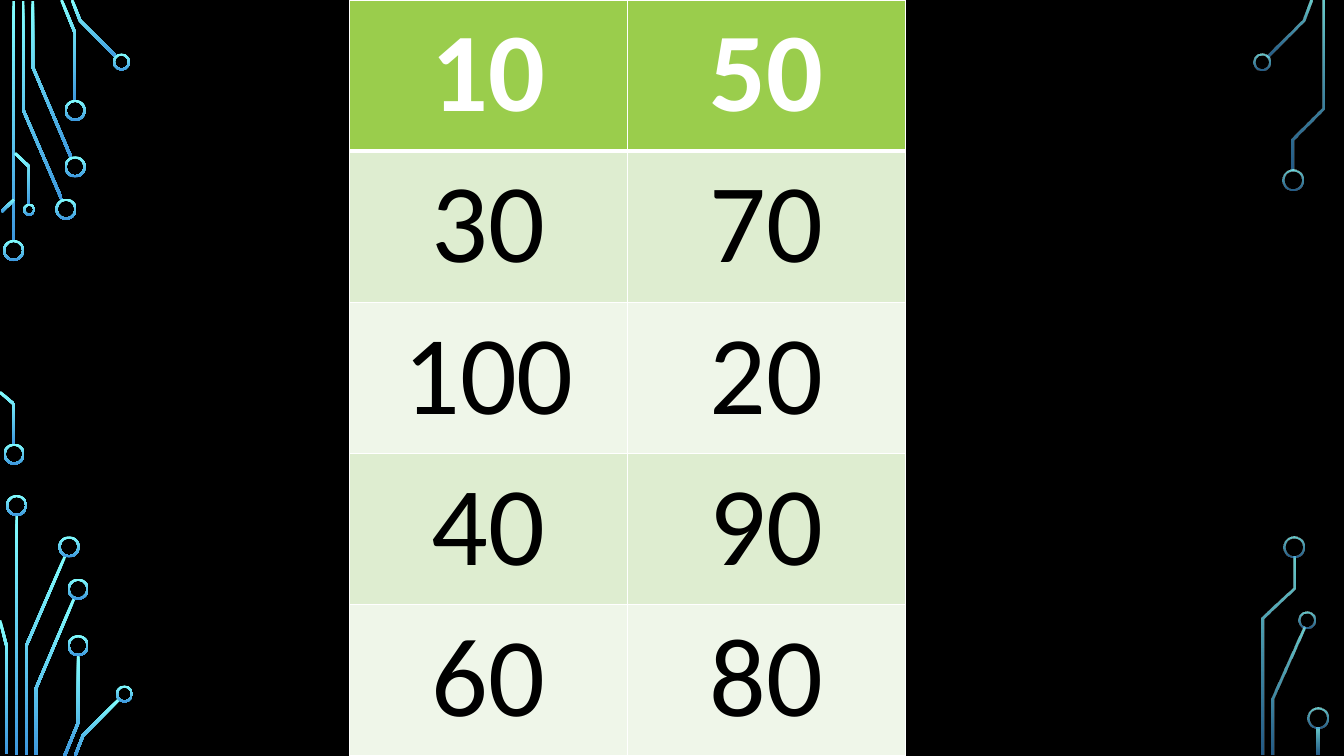
"""Build a slide with a two-column number table between circuit-board wires."""
from pptx import Presentation
from pptx import util as u
from pptx.dml.color import RGBColor
from pptx.enum import shapes, text
from pptx.oxml import ns, xmlchemy

BLACK = RGBColor(0x00, 0x00, 0x00)
WHITE = RGBColor(0xFF, 0xFF, 0xFF)
CYAN = RGBColor(0x82, 0xFF, 0xFF)
BLUE = RGBColor(0x3D, 0x97, 0xDE)
GREEN = RGBColor(0x9A, 0xCD, 0x4C)
BANDS = [RGBColor(0xEF, 0xF6, 0xE9), RGBColor(0xDE, 0xED, 0xD0)]

GRID = u.Inches(0.01)
SLIDE_COLUMNS, SLIDE_ROWS = 1333, 750
WIRE_WIDTH = 2.7
RING_WIDTH = 2
NO_RING, TINY, SMALL, LARGE = 0, 12, 17, 21
SOLID, FADED = (100, 100), (80, 60)

TRUNK = ([(13.5, 1), (13.5, 248.5)], LARGE)
LONG_WIRE = ([(23, 1), (23, 109), (65.5, 207.5)], LARGE)
MIDDLE_WIRE = ([(32.5, 1), (32.5, 66.5), (74.5, 165.5)], LARGE)
SHORT_WIRE = ([(61, 0), (74.5, 33), (74.5, 109.5)], LARGE)
CORNER_WIRE = ([(71.5, 0), (79.5, 20.5), (120.5, 61.5)], SMALL)
FAN = [TRUNK, LONG_WIRE, MIDDLE_WIRE, SHORT_WIRE, CORNER_WIRE]
FAN_SHIFT = 3
CORNER_MIRROR = 1372

bottom_fan = [
    ([(x + FAN_SHIFT, SLIDE_ROWS - y) for x, y in path], ring_size)
    for path, ring_size in FAN
]
corner_path, corner_ring = CORNER_WIRE
right_corner = ([(CORNER_MIRROR - x, y) for x, y in corner_path], corner_ring)

trunk_branch = ([(15, 152), (29, 165.5), (29, 208)], TINY)
trunk_twig = ([(1.5, 210), (14, 198)], NO_RING)
edge_hook = ([(0, 389), (14, 401), (14, 450.5)], LARGE)
edge_stub = ([(0, 615.5), (6.5, 641), (6.5, 748)], NO_RING)
right_top_step = ([(1312.5, 1), (1312.5, 107.5), (1282.5, 138), (1282.5, 178.5)], LARGE)
right_bottom_step = ([(1252.5, 749), (1252.5, 613.5), (1283.5, 583.5), (1283.5, 542.5)], LARGE)
right_slant = ([(1262.5, 749), (1262.5, 693.5), (1296.5, 615.5)], SMALL)
right_stem = ([(1307, 749), (1307, 712.5)], LARGE)

left_wires = FAN + bottom_fan + [trunk_branch, trunk_twig, edge_hook, edge_stub]
right_wires = [right_corner, right_top_step, right_bottom_step, right_slant, right_stem]
NUMBERS = [("10", "50"), ("30", "70"), ("100", "20"), ("40", "90"), ("60", "80")]


def wire_outline(path, ring_size):
    """Widen a centre line into a band that stops at the inside of its ring."""
    points = [complex(x, y) for x, y in path]
    directions = [(end - start) / abs(end - start) for start, end in zip(points, points[1:])]
    if ring_size:
        points[-1] -= directions[-1] * (ring_size / 2 - RING_WIDTH / 2)
    normals = [direction * 1j for direction in directions]
    near_side, far_side = [], []
    for point, before, after in zip(points, normals[:1] + normals, normals + normals[-1:]):
        miter = (before + after) / (1 + (before * after.conjugate()).real)
        near_side.append(point + miter * WIRE_WIDTH / 2)
        far_side.append(point - miter * WIRE_WIDTH / 2)
    return [(point.real * GRID, point.imag * GRID) for point in near_side + far_side[::-1]]


def add_border(cell, side, points):
    """Draw one white cell edge."""
    line = xmlchemy.OxmlElement(f"a:ln{side}")
    line.set("w", str(u.Pt(points)))
    fill = xmlchemy.OxmlElement("a:solidFill")
    color = xmlchemy.OxmlElement("a:srgbClr")
    color.set("val", str(WHITE))
    fill.append(color)
    line.append(fill)
    cell._tc.get_or_add_tcPr().append(line)


presentation = Presentation()
presentation.slide_width = GRID * SLIDE_COLUMNS
presentation.slide_height = GRID * SLIDE_ROWS
slide = presentation.slides.add_slide(presentation.slide_layouts[6])
slide.background.fill.solid()
slide.background.fill.fore_color.rgb = BLACK

for wires, opacities in [(left_wires, SOLID), (right_wires, FADED)]:
    for path, ring_size in wires:
        outline = wire_outline(path, ring_size)
        xs, ys = zip(*outline)
        straight = path[0][0] == path[-1][0] and len(path) == 2
        if straight:
            box = [round(n) for n in (min(xs), min(ys), max(xs) - min(xs), max(ys) - min(ys))]
            parts = [slide.shapes.add_shape(shapes.MSO_SHAPE.RECTANGLE, *box)]
        else:
            builder = slide.shapes.build_freeform(*outline[0], scale=1.0)
            builder.add_line_segments(outline[1:], close=True)
            parts = [builder.convert_to_shape()]
        if ring_size:
            center_x, center_y = path[-1]
            left, top = center_x - ring_size / 2, center_y - ring_size / 2
            box = [round(GRID * length) for length in (left, top, ring_size, ring_size)]
            ring = slide.shapes.add_shape(shapes.MSO_SHAPE.DONUT, *box)
            ring.adjustments[0] = RING_WIDTH / ring_size
            parts.append(ring)
        for part in parts:
            part.shadow.inherit = False
            part.line.fill.background()
            part.fill.gradient()
            part.fill.gradient_angle = 270
            for stop, color in zip(part.fill.gradient_stops, (CYAN, BLUE)):
                stop.color.rgb = color
            for color_element, opacity in zip(part.element.iter(ns.qn("a:srgbClr")), opacities):
                alpha = xmlchemy.OxmlElement("a:alpha")
                alpha.set("val", str(opacity * 1000))
                color_element.append(alpha)

column_width = u.Inches(2.755)
row_height = presentation.slide_height // len(NUMBERS)
table = slide.shapes.add_table(
    len(NUMBERS), 2, u.Inches(3.47), 0, 2 * column_width, presentation.slide_height
).table
for column in table.columns:
    column.width = column_width
for row_index, numbers in enumerate(NUMBERS):
    header = row_index == 0
    table.rows[row_index].height = row_height
    for column_index, number in enumerate(numbers):
        cell = table.cell(row_index, column_index)
        for side in "LRTB":
            under_header = (row_index, side) in [(0, "B"), (1, "T")]
            add_border(cell, side, 3 if under_header else 1)
        cell.fill.solid()
        cell.fill.fore_color.rgb = GREEN if header else BANDS[row_index % 2]
        cell.text_frame.text = number
        paragraph = cell.text_frame.paragraphs[0]
        paragraph.alignment = text.PP_ALIGN.CENTER
        font = paragraph.runs[0].font
        font.name = "Calibri"
        font.size = u.Pt(80)
        font.bold = header
        font.color.rgb = WHITE if header else BLACK

presentation.save("out.pptx")
